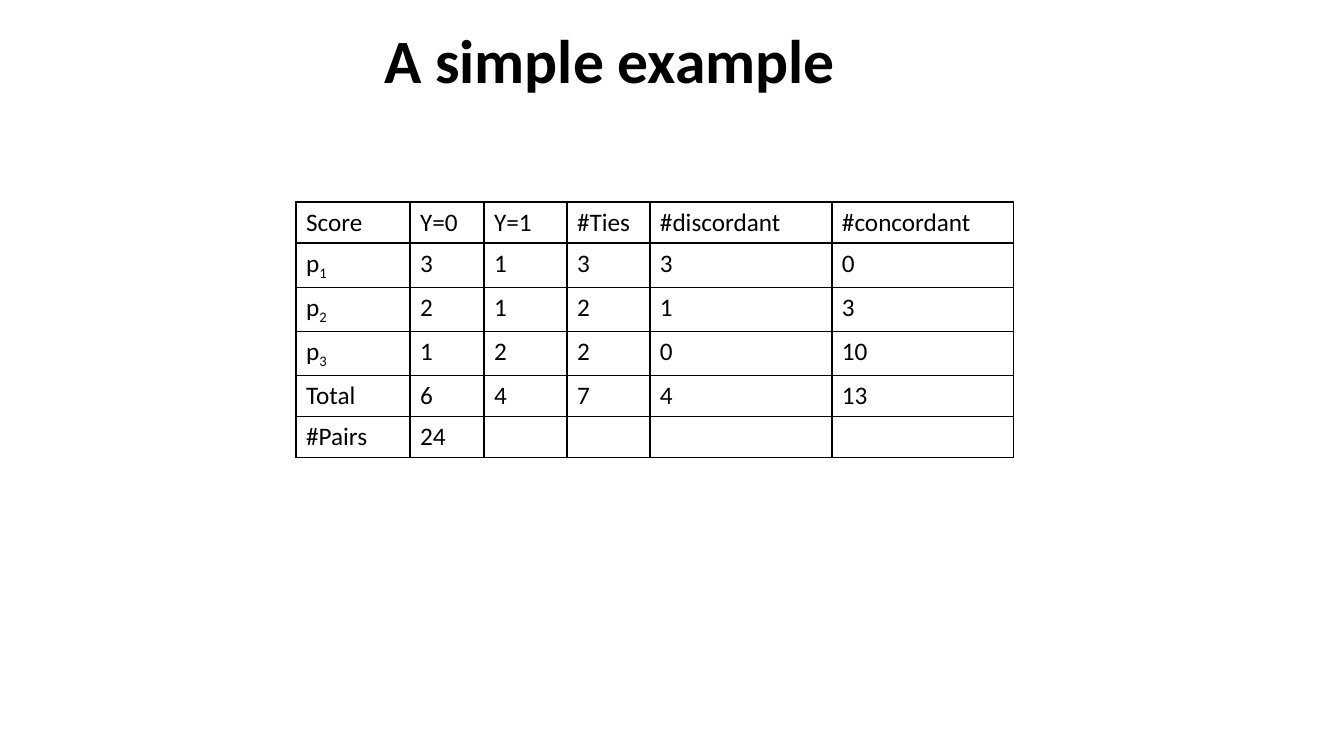
from lxml.etree import SubElement
from pptx import Presentation
from pptx.dml.color import RGBColor
from pptx.enum.text import MSO_ANCHOR, PP_ALIGN
from pptx.oxml.ns import qn
from pptx.util import Emu, Pt

WIDE, HIGH = 1344, 756
COLS = [114, 74, 83, 83, 182, 182]
ROW = 41
SCORES = [
    ["Score", "Y=0", "Y=1", "#Ties", "#discordant", "#concordant"],
    ["p_1", "3", "1", "3", "3", "0"],
    ["p_2", "2", "1", "2", "1", "3"],
    ["p_3", "1", "2", "2", "0", "10"],
    ["Total", "6", "4", "7", "4", "13"],
    ["#Pairs", "24", "", "", "", ""],
]


def px(count):
    """Turn whole pixels into EMU."""
    return Emu(round(count * 914400 / 100.8))


def color(code):
    """Turn a hex string into a colour."""
    return RGBColor.from_string(code)


class Deck:
    """Hold the style and the current slide."""

    font = "Calibri"
    ink = "000000"

    def __init__(self):
        """Open a deck with one title-only slide."""
        self.show = Presentation()
        self.show.slide_width, self.show.slide_height = px(WIDE), px(HIGH)
        self.slide = self.show.slides.add_slide(self.show.slide_layouts[5])

    def run(self, para, text, size, bold=False):
        """Add one styled run and return it."""
        run = para.add_run()
        run.text = text
        run.font.name, run.font.size, run.font.bold = self.font, Pt(size), bold
        run.font.color.rgb = color(self.ink)
        return run

    def title(self, text, left, top, width, height):
        """Place and fill the title."""
        box = self.slide.shapes.title
        box.left, box.top = px(left), px(top)
        box.width, box.height = px(width), px(height)
        box.text_frame.vertical_anchor = MSO_ANCHOR.MIDDLE
        para = box.text_frame.paragraphs[0]
        para.alignment, para.line_spacing = PP_ALIGN.LEFT, 0.9
        self.run(para, text, 44, True)

    def border(self, cell):
        """Draw a thin line on each side of a cell."""
        props = cell._tc.get_or_add_tcPr()
        for side in ("lnL", "lnR", "lnT", "lnB"):
            line = SubElement(props, qn(f"a:{side}"), w=str(Pt(1)))
            fill = SubElement(line, qn("a:solidFill"))
            SubElement(fill, qn("a:srgbClr"), val=self.ink)

    def cell(self, cell, text):
        """Fill a cell, lowering what follows an underscore."""
        self.border(cell)
        cell.fill.background()
        base, _, sub = text.partition("_")
        para = cell.text_frame.paragraphs[0]
        if base:
            self.run(para, base, 18)
        if sub:
            low = self.run(para, sub, 18)
            low.font._element.set("baseline", "-25000")

    def table(self, rows, cols, left, top, high):
        """Add a plain ruled table."""
        frame = self.slide.shapes.add_table(
            len(rows), len(cols), px(left), px(top),
            px(sum(cols)), px(high * len(rows)))
        grid = frame.table
        grid.first_row = grid.horz_banding = False
        for col, width in zip(grid.columns, cols):
            col.width = px(width)
        for row, texts in zip(grid.rows, rows):
            row.height = px(high)
            for cell, text in zip(row.cells, texts):
                self.cell(cell, text)


def main():
    """Build and save the slide."""
    deck = Deck()
    deck.title("A simple example", 374, 0, 501, 128)
    deck.table(SCORES, COLS, 296, 202, ROW)
    deck.show.save("out.pptx")


if __name__ == "__main__":
    main()
